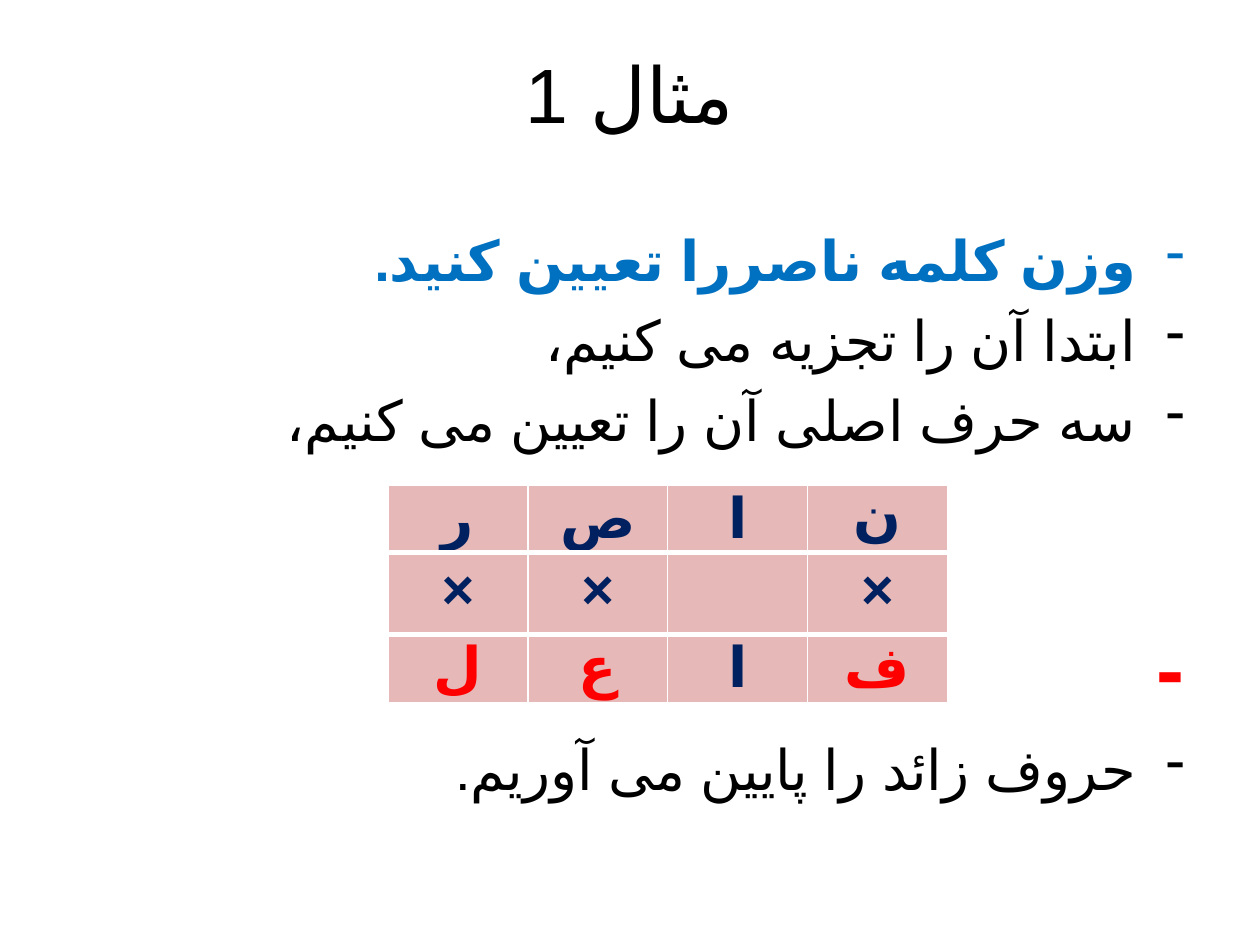
from lxml import etree
from pptx import Presentation
from pptx.dml.color import RGBColor
from pptx.enum.text import MSO_ANCHOR, PP_ALIGN
from pptx.oxml.ns import qn
from pptx.util import Inches, Pt

CENTER, RIGHT = PP_ALIGN.CENTER, PP_ALIGN.RIGHT
MIDDLE = MSO_ANCHOR.MIDDLE
BLACK = RGBColor(0x00, 0x00, 0x00)
BLUE = RGBColor(0x00, 0x70, 0xC0)
NAVY = RGBColor(0x00, 0x20, 0x60)
RED = RGBColor(0xFF, 0x00, 0x00)
PINK = RGBColor(0xE6, 0xB9, 0xB8)
WHITE = RGBColor(0xFF, 0xFF, 0xFF)


def write(paragraph, text, size=32, color=BLACK, bold=False, font="Arial",
          align=RIGHT, rtl=True, bullet=None, before=0):
    """Fill a paragraph with Persian text, naming the font for both scripts."""
    paragraph.alignment = align
    paragraph.space_before = Pt(before)
    properties = paragraph._p.get_or_add_pPr()
    if rtl:
        properties.set("rtl", "1")
    if bullet:
        properties.set("marL", str(Inches(0.38)))
        properties.set("indent", str(Inches(-0.38)))
        etree.SubElement(properties, qn("a:buFontTx"))
        etree.SubElement(properties, qn("a:buChar"), char=bullet)
    run = paragraph.add_run()
    run.text = text
    run.font.size = Pt(size)
    run.font.bold = bold
    run.font.color.rgb = color
    run.font.name = font
    run.font._element.set("lang", "fa-IR")
    etree.SubElement(run.font._element, qn("a:cs"), typeface=font)


def add_border(cell, side, width):
    line = etree.Element(qn(f"a:{side}"), w=str(Pt(width)))
    fill = etree.SubElement(line, qn("a:solidFill"))
    etree.SubElement(fill, qn("a:srgbClr"), val=str(WHITE))
    cell._tc.get_or_add_tcPr().insert(0, line)


prs = Presentation()
prs.slide_width, prs.slide_height = Inches(10), Inches(7.5)
slide = prs.slides.add_slide(prs.slide_layouts[6])

title = slide.shapes.add_textbox(Inches(0.5), Inches(0.3), Inches(9), Inches(0.87)).text_frame
title.word_wrap = True
title.vertical_anchor = MIDDLE
write(title.paragraphs[0], "مثال 1", size=44, align=CENTER)

steps = slide.shapes.add_textbox(Inches(0.5), Inches(1.74), Inches(9), Inches(5.42)).text_frame
steps.word_wrap = True
STEPS = [
    ("وزن کلمه ناصررا تعیین کنید.", dict(color=BLUE, bold=True, bullet="-")),
    ("ابتدا آن را تجزیه می کنیم،", dict(bullet="-", before=7.4)),
    ("سه حرف اصلی آن را تعیین می کنیم،", dict(bullet="-", before=7.4)),
    ("-", dict(size=48, color=RED, bold=True, before=93)),
    ("حروف زائد را پایین می آوریم.", dict(bullet="-", before=10)),
]
for i, (text, style) in enumerate(STEPS):
    write(steps.paragraphs[0] if i == 0 else steps.add_paragraph(), text, **style)

LETTERS = ["رصان", "×× ×", "لعاف"]
ROW_HEIGHTS = [0.53, 0.65, 0.54]
pattern = slide.shapes.add_table(3, 4, Inches(3.08), Inches(3.85),
                                 Inches(4.44), Inches(sum(ROW_HEIGHTS))).table
for r, (letters, height) in enumerate(zip(LETTERS, ROW_HEIGHTS)):
    pattern.rows[r].height = Inches(height)
    for c, letter in enumerate(letters):
        cell = pattern.cell(r, c)
        cell.fill.solid()
        cell.fill.fore_color.rgb = PINK
        if r == 0:
            add_border(cell, "lnB", 3)
        elif r == 1:
            add_border(cell, "lnT", 3)
        if r != 1:
            cell.margin_top = cell.margin_bottom = 0
        if letter != " ":
            write(cell.text_frame.paragraphs[0], letter, bold=True, align=CENTER, rtl=False,
                  color=RED if letter in "فعل" else NAVY,
                  font="Arial" if letter in "ن×" else "Calibri")

prs.save("out.pptx")
